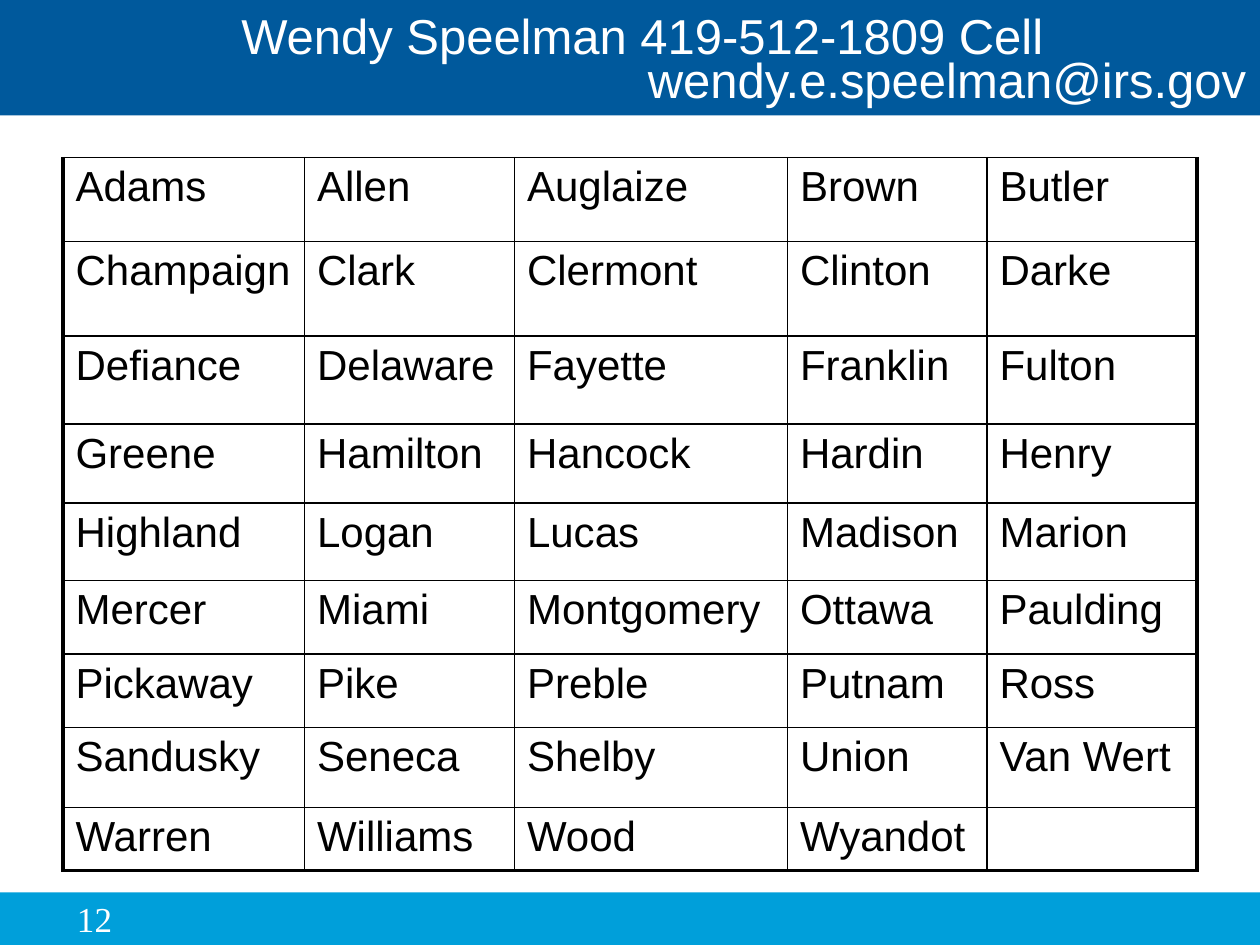
"""Build the slide that lists the counties served by one contact."""
from lxml.etree import SubElement
from pptx import Presentation
from pptx.dml.color import RGBColor
from pptx.enum.shapes import MSO_SHAPE as Shape
from pptx.enum.text import MSO_ANCHOR as Anchor, PP_ALIGN as Align
from pptx.oxml.ns import qn
from pptx.util import Inches, Pt

GRID_COLUMNS, GRID_ROWS, UNIT = 120, 90, Inches(1) // 12
HEADER_ROWS, FOOTER_ROWS = 11, 5
FOOTER_TOP = GRID_ROWS - FOOTER_ROWS
WHITE, BLACK, NAVY, SKY = "FFFFFF", "000000", "00599C", "009FDA"
THIN, THICK = 1, 2.25

COLUMN_WIDTHS = [23, 20, 26, 19, 20]
ROW_HEIGHTS = [8, 9, 8.4, 7.5, 7.4, 7, 7, 7.6, 6]
COUNTIES = [
    ["Adams", "Allen", "Auglaize", "Brown", "Butler"],
    ["Champaign", "Clark", "Clermont", "Clinton", "Darke"],
    ["Defiance", "Delaware", "Fayette", "Franklin", "Fulton"],
    ["Greene", "Hamilton", "Hancock", "Hardin", "Henry"],
    ["Highland", "Logan", "Lucas", "Madison", "Marion"],
    ["Mercer", "Miami", "Montgomery", "Ottawa", "Paulding"],
    ["Pickaway", "Pike", "Preble", "Putnam", "Ross"],
    ["Sandusky", "Seneca", "Shelby", "Union", "Van Wert"],
    ["Warren", "Williams", "Wood", "Wyandot", ""],
]


def units(count):
    """Turn grid units into a length."""
    return round(count * UNIT)


def box(*cells):
    """Turn left, top, width and height in grid units into lengths."""
    return [units(count) for count in cells]


def paint(fill, colour):
    """Fill with one solid hex colour."""
    fill.solid()
    fill.fore_color.rgb = RGBColor.from_string(colour)


def write(paragraph, text, size, colour, font="Arial", align=Align.LEFT,
          spacing=None, indent=0):
    """Put formatted text into a paragraph."""
    paragraph.alignment = align
    paragraph.line_spacing = spacing
    if indent:
        paragraph._p.get_or_add_pPr().set("marL", str(units(indent)))
    paragraph.font.size = Pt(size)
    if text:
        run = paragraph.add_run()
        run.text = text
        run.font.name, run.font.size = font, Pt(size)
        run.font.color.rgb = RGBColor.from_string(colour)


def add_band(slide, top, height, colour):
    """Draw a band over the full width of the slide."""
    band = slide.shapes.add_shape(
        Shape.RECTANGLE, *box(0, top, GRID_COLUMNS, height))
    band.shadow.inherit = False
    paint(band.fill, colour)
    band.line.fill.background()


def add_text_frame(slide, area, anchor):
    """Add a text box without margins and return its frame."""
    frame = slide.shapes.add_textbox(*box(*area)).text_frame
    frame.word_wrap = True
    frame.vertical_anchor = anchor
    frame.margin_left = frame.margin_right = 0
    frame.margin_top = frame.margin_bottom = 0
    return frame


def set_borders(cell, **widths):
    """Draw black cell borders, with a width in points for each side."""
    properties = cell._tc.get_or_add_tcPr()
    for side, width in widths.items():
        line = SubElement(properties, qn(f"a:ln{side}"), w=str(Pt(width)))
        SubElement(SubElement(line, qn("a:solidFill")),
                   qn("a:srgbClr"), val=BLACK)


def add_county_table(slide, left, top):
    """Add the table of counties with a heavy edge on three sides."""
    last_row, last_column = len(ROW_HEIGHTS) - 1, len(COLUMN_WIDTHS) - 1
    area = box(left, top, sum(COLUMN_WIDTHS), sum(ROW_HEIGHTS))
    table = slide.shapes.add_table(
        len(ROW_HEIGHTS), len(COLUMN_WIDTHS), *area).table
    table.first_row = table.horz_banding = False
    for column, width in zip(table.columns, COLUMN_WIDTHS):
        column.width = units(width)
    for row, height in zip(table.rows, ROW_HEIGHTS):
        row.height = units(height)
    for r, names in enumerate(COUNTIES):
        for c, county in enumerate(names):
            cell = table.cell(r, c)
            set_borders(cell,
                        L=THICK if c == 0 else THIN,
                        R=THICK if c == last_column else THIN,
                        T=THIN,
                        B=THICK if r == last_row else THIN)
            paint(cell.fill, WHITE)
            write(cell.text_frame.paragraphs[0], county, 24, BLACK)


def main():
    """Build and save the slide."""
    deck = Presentation()
    deck.slide_width, deck.slide_height = units(GRID_COLUMNS), units(GRID_ROWS)
    slide = deck.slides.add_slide(deck.slide_layouts[6])

    add_band(slide, FOOTER_TOP, FOOTER_ROWS, SKY)
    add_band(slide, 0, HEADER_ROWS, NAVY)

    contact = add_text_frame(slide, (23, -3, 97, 18), Anchor.MIDDLE)
    write(contact.paragraphs[0], "Wendy Speelman 419-512-1809 Cell",
          28, WHITE, spacing=0.75)
    write(contact.add_paragraph(), "wendy.e.speelman@irs.gov",
          28, WHITE, spacing=0.75, indent=38.7)

    page = add_text_frame(slide, (4, FOOTER_TOP, 10, 4), Anchor.BOTTOM)
    write(page.paragraphs[0], "12", 20, WHITE, font="Times New Roman",
          align=Align.CENTER, spacing=0.3)

    add_county_table(slide, 6, 15)
    deck.save("out.pptx")


if __name__ == "__main__":
    main()
